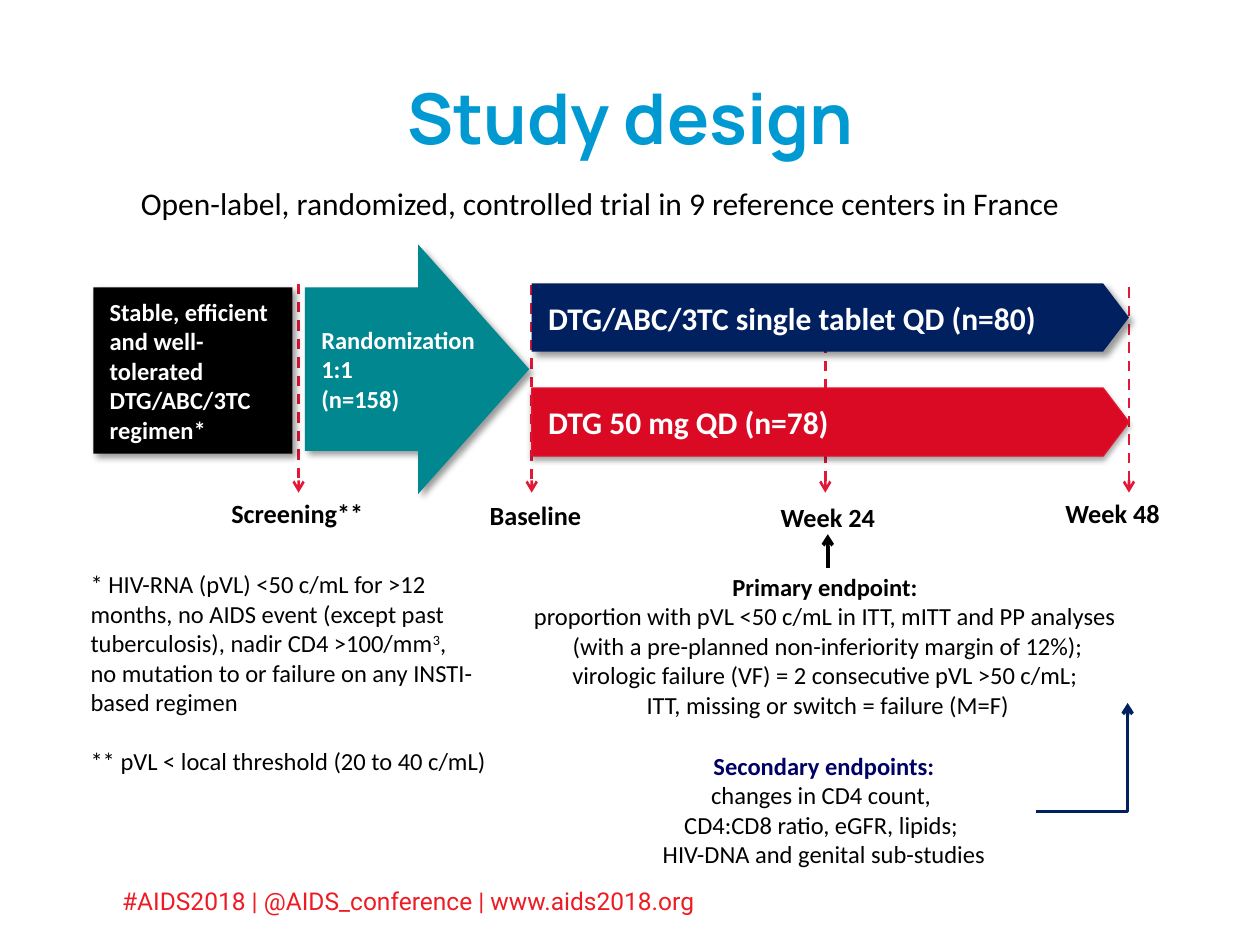
from lxml.etree import SubElement
from pptx import Presentation
from pptx.dml.color import RGBColor
from pptx.enum.dml import MSO_LINE
from pptx.enum.shapes import MSO_CONNECTOR, MSO_SHAPE
from pptx.enum.text import MSO_ANCHOR, PP_ALIGN
from pptx.oxml.ns import qn
from pptx.util import Inches, Pt

COLORS = {
    "title": "0099D2", "footer": "ED1C24", "black": "000000", "white": "FFFFFF",
    "teal": "008790", "navy": "002060", "red": "DA0A24", "red_edge": "E31331",
    "dash": "E31836", "secondary": "000066",
}
SOFT_SHADOW = (40, 4, 3, 45)
LOW_SHADOW = (35, 3.1, 1.8, 90)
WIDE_INSETS = (0.13, 0.06)
PLAIN_INSETS = (0.1, 0.05)
LABEL_WIDTH = 1.4


def rgb(name):
    """Return the named palette colour."""
    return RGBColor.from_string(COLORS[name])


def set_text(sp, lines, size, color="black", bold=False, font="Calibri",
             align=PP_ALIGN.LEFT, anchor=MSO_ANCHOR.TOP, wrap=True, insets=WIDE_INSETS):
    """Fill a shape with one evenly styled paragraph per line."""
    tf = sp.text_frame
    tf.word_wrap = wrap
    tf.vertical_anchor = anchor
    tf.margin_left = tf.margin_right = Inches(insets[0])
    tf.margin_top = tf.margin_bottom = Inches(insets[1])
    for i, line in enumerate(lines):
        p = tf.add_paragraph() if i else tf.paragraphs[0]
        p.text = line
        p.alignment = align
        p.font.name, p.font.size, p.font.bold = font, Pt(size), bold
        p.font.color.rgb = rgb(color)
    return tf


def add_text(s, box, lines, size, **style):
    """Add a text box."""
    sp = s.shapes.add_textbox(*map(Inches, box))
    return set_text(sp, lines, size, **style)


def add_shadow(sp, alpha, blur, dist, angle):
    """Give a shape a black outer shadow."""
    sp.shadow.inherit = False
    effects = sp._element.spPr.find(qn("a:effectLst"))
    outer = SubElement(effects, qn("a:outerShdw"), blurRad=str(Pt(blur)), dist=str(Pt(dist)),
                       dir=str(angle * 60000), algn="tl", rotWithShape="0")
    clr = SubElement(outer, qn("a:srgbClr"), val=COLORS["black"])
    SubElement(clr, qn("a:alpha"), val=str(alpha * 1000))


def add_block(s, kind, box, lines, size, fill, adj=(), edge=None, shadow=SOFT_SHADOW, wrap=False):
    """Add a filled shape with bold white text."""
    sp = s.shapes.add_shape(kind, *map(Inches, box))
    for i, value in enumerate(adj):
        sp.adjustments[i] = value
    sp.fill.solid()
    sp.fill.fore_color.rgb = rgb(fill)
    if edge:
        sp.line.color.rgb = rgb(edge)
        sp.line.width = Pt(0.75)
    else:
        sp.line.fill.background()
    add_shadow(sp, *shadow)
    set_text(sp, lines, size, color="white", bold=True, anchor=MSO_ANCHOR.MIDDLE, wrap=wrap)


def add_arrow(s, start, end, color, width, dashed=False, bent=False):
    """Add a straight or single-bend arrow."""
    kind = MSO_CONNECTOR.ELBOW if bent else MSO_CONNECTOR.STRAIGHT
    cx = s.shapes.add_connector(kind, *map(Inches, (*start, *end)))
    cx.line.color.rgb = rgb(color)
    cx.line.width = Pt(width)
    if dashed:
        cx.line.dash_style = MSO_LINE.DASH
    spPr = cx._element.spPr
    if bent:
        spPr.find(qn("a:prstGeom")).set("prst", "bentConnector2")
    SubElement(spPr.find(qn("a:ln")), qn("a:tailEnd"), type="arrow")
    SubElement(spPr, qn("a:effectLst"))


def add_heading(s, x, y, w):
    """Place the title and the subtitle."""
    add_text(s, (x, y, w, 1.25), ["Study design"], 40, color="title", bold=True,
             font="Manrope", align=PP_ALIGN.CENTER, anchor=MSO_ANCHOR.MIDDLE, insets=PLAIN_INSETS)
    add_text(s, (x + 0.4, y + 1.11, w - 0.81, 0.4),
             ["Open-label, randomized, controlled trial in 9 reference centers in France"],
             18, insets=PLAIN_INSETS)


def add_timeline(s, x, y):
    """Place the study phases, treatment arms and dated milestones."""
    milestones = [
        ("Screening**", 1.63, 0.31, 1.62, 1.95),
        ("Baseline", 3.48, 0.32, 3.51, 1.96),
        ("Week 24", 5.81, 0.34, 5.83, 1.98),
        ("Week 48", 8.22, 0.34, 8.09, 1.95),
    ]
    for label, line_x, top, center, label_y in milestones:
        add_arrow(s, (x + line_x, y + top), (x + line_x, y + 1.97), "dash", 1.5, dashed=True)
        add_text(s, (x + center - LABEL_WIDTH / 2, y + label_y, LABEL_WIDTH, 0.38), [label], 15,
                 bold=True, align=PP_ALIGN.CENTER)

    add_block(s, MSO_SHAPE.RECTANGLE, (x, y + 0.34, 1.58, 1.32),
              ["Stable, efficient and well-tolerated DTG/ABC/3TC regimen*"], 14, "black", wrap=True)
    add_block(s, MSO_SHAPE.RIGHT_ARROW, (x + 1.68, y, 1.78, 1.98),
              ["Randomization \v1:1", "(n=158)"], 14, "teal", adj=(0.655, 0.495))
    arms = [
        ("DTG/ABC/3TC single tablet QD (n=80)", 0.31, "navy", None, SOFT_SHADOW),
        ("DTG 50 mg QD (n=78)", 1.14, "red", "red_edge", LOW_SHADOW),
    ]
    for label, top, fill, edge, shadow in arms:
        add_block(s, MSO_SHAPE.PENTAGON, (x + 3.48, y + top, 4.74, 0.54), [label], 18, fill,
                  adj=(0.379,), edge=edge, shadow=shadow)


def add_endpoints(s, x, y):
    """Place both endpoint lists and the arrows to their milestones."""
    lists = [
        ((x, y, 5.06, 1.31), "black", [
            "Primary endpoint: ",
            "proportion with pVL <50 c/mL in ITT, mITT and PP analyses ",
            "(with a pre-planned non-inferiority margin of 12%);",
            "virologic failure (VF) = 2 consecutive pVL >50 c/mL; ",
            "ITT, missing or switch = failure (M=F)"]),
        ((x + 0.82, y + 1.42, 3.36, 1.07), "secondary", [
            "Secondary endpoints:",
            "changes in CD4 count, ",
            "CD4:CD8 ratio, eGFR, lipids; ",
            "HIV-DNA and genital sub-studies"]),
    ]
    for box, color, lines in lists:
        tf = add_text(s, box, lines, 14, align=PP_ALIGN.CENTER)
        head = tf.paragraphs[0].font
        head.bold = True
        head.color.rgb = rgb(color)
    add_arrow(s, (x + 2.53, y + 0.03), (x + 2.53, y - 0.24), "black", 2)
    add_arrow(s, (x + 4.18, y + 1.96), (x + 4.91, y + 1.1), "navy", 2, bent=True)


def add_footnotes(s, x, y, w, h):
    """Place the notes on eligibility and screening."""
    tf = add_text(s, (x, y, w, h), [
        "* HIV-RNA (pVL) <50 c/mL for >12 months, no AIDS event (except past "
        "tuberculosis), nadir CD4 >100/mm",
        "no mutation to or failure on any INSTI-based regimen",
        "** pVL < local threshold (20 to 40 c/mL)"], 14, insets=PLAIN_INSETS)
    p = tf.paragraphs[0]
    r = p.add_run()
    r.text = "3"
    r.font._element.set("baseline", "30000")
    p.add_run().text = ","
    tf.paragraphs[2].space_before = Pt(17)


def add_footer(s, x, y, w, h):
    """Place the conference line."""
    add_text(s, (x, y, w, h), ["#AIDS2018 | @AIDS_conference | www.aids2018.org"],
             14, color="footer", font="Roboto", insets=PLAIN_INSETS)


def main():
    """Build the study design slide."""
    prs = Presentation()
    prs.slide_width, prs.slide_height = Inches(10), Inches(7.5)
    s = prs.slides.add_slide(prs.slide_layouts[6])
    add_heading(s, 0.62, 0.3, 8.77)
    add_timeline(s, 0.74, 1.94)
    add_endpoints(s, 4.04, 4.48)
    add_footnotes(s, 0.62, 4.47, 3.42, 1.75)
    add_footer(s, 0.87, 6.98, 7.49, 0.34)
    prs.save("out.pptx")


if __name__ == "__main__":
    main()
